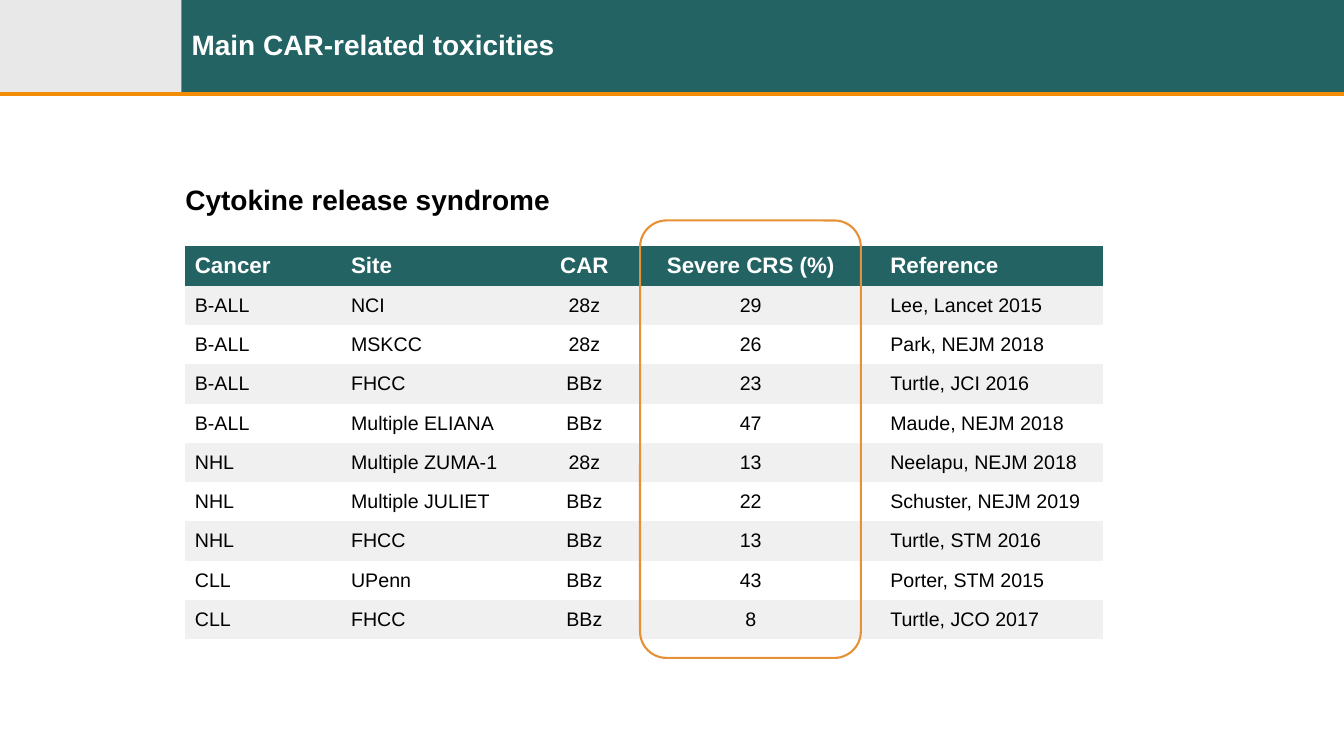
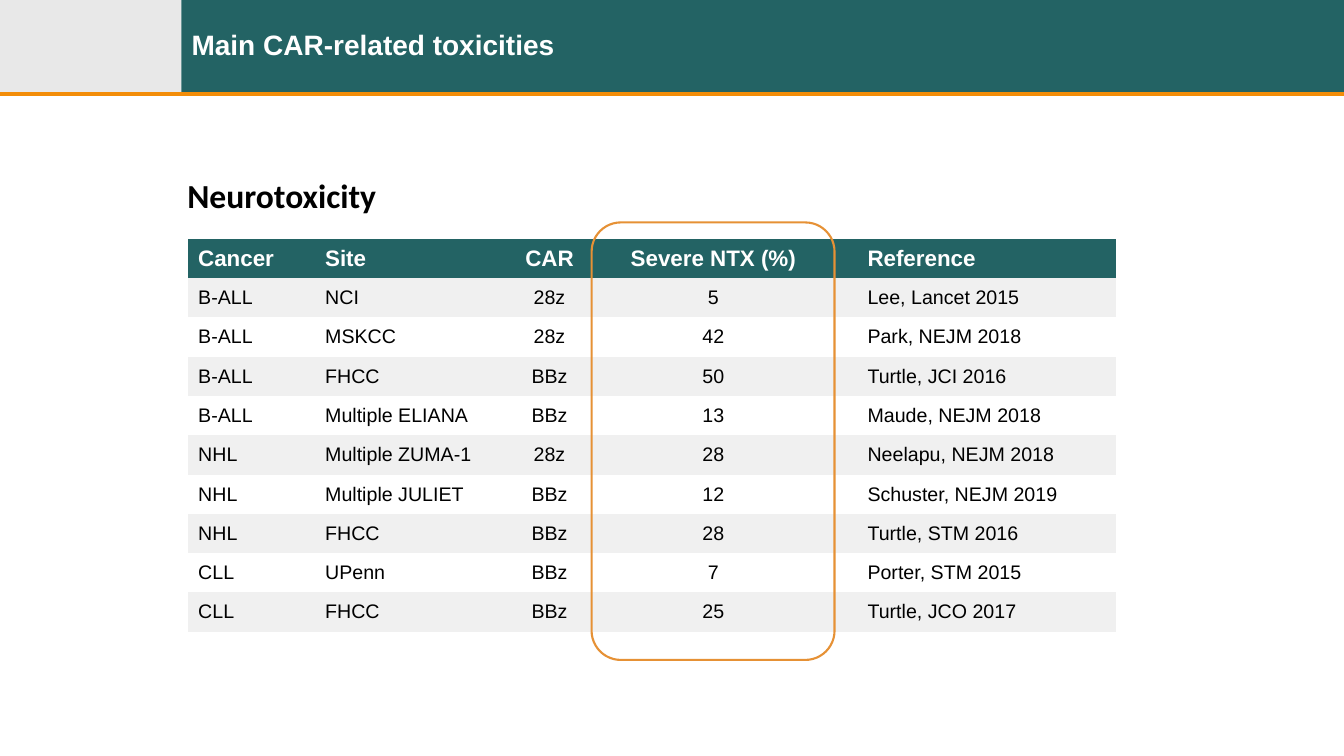
"""Build two slides of toxicity tables for CAR T-cell trials."""
from dataclasses import dataclass
from lxml.etree import SubElement
from pptx import Presentation
from pptx.dml.color import RGBColor
from pptx.enum.shapes import MSO_CONNECTOR, MSO_SHAPE
from pptx.enum.text import MSO_ANCHOR, MSO_AUTO_SIZE, PP_ALIGN
from pptx.oxml.ns import qn
from pptx.util import Pt

COLORS = {
    "teal": "236364", "orange": "F38D08", "frame": "E69135", "corner": "222222",
    "band": "F0F0F0", "white": "FFFFFF", "black": "000000",
}
WIDTH, HEIGHT = 960, 540
BAND_H, CORNER_W, ROW_H = 66.4, 129.6, 28.08
NO_STYLE = "{2D5ABB26-0587-4C30-8999-92F81FD0307C}"
CENTERED = (2, 3)
TRIALS = [
    ("B-ALL", "NCI", "28z", "Lee, Lancet 2015"),
    ("B-ALL", "MSKCC", "28z", "Park, NEJM 2018"),
    ("B-ALL", "FHCC", "BBz", "Turtle, JCI 2016"),
    ("B-ALL", "Multiple ELIANA", "BBz", "Maude, NEJM 2018"),
    ("NHL", "Multiple ZUMA-1", "28z", "Neelapu, NEJM 2018"),
    ("NHL", "Multiple JULIET", "BBz", "Schuster, NEJM 2019"),
    ("NHL", "FHCC", "BBz", "Turtle, STM 2016"),
    ("CLL", "UPenn", "BBz", "Porter, STM 2015"),
    ("CLL", "FHCC", "BBz", "Turtle, JCO 2017"),
]


@dataclass(frozen=True)
class Box:
    left: float
    top: float
    width: float
    height: float

    def emu(self) -> tuple:
        return Pt(self.left), Pt(self.top), Pt(self.width), Pt(self.height)


@dataclass(frozen=True)
class Toxicity:
    heading: str
    heading_box: Box
    heading_font: str
    heading_size: int
    measure: str
    rates: tuple
    table_left: float
    table_top: float
    col_widths: tuple
    indents: dict
    frame: Box


TOXICITIES = [
    Toxicity("Cytokine release syndrome", Box(125.3, 126.7, 277.2, 31.5), "Arial", 20,
             "Severe CRS (%)", (29, 26, 23, 47, 13, 22, 13, 43, 8),
             132, 176, (98.6, 147.6, 78.5, 159.1, 172.1), {1: 20.2, 4: 20.2},
             Box(457.2, 157.5, 157.7, 312.5)),
    Toxicity("Neurotoxicity", Box(126.7, 121.2, 150.5, 36.4), "Calibri", 24,
             "Severe NTX (%)", (5, 42, 50, 13, 28, 12, 28, 7, 25),
             134.4, 170.6, (86.4, 139.7, 64.1, 169.9, 203), {1: 11.5, 4: 25.2},
             Box(422.6, 158.9, 173.5, 312.5)),
]


def rgb(name: str) -> RGBColor:
    return RGBColor.from_string(COLORS[name])


def style(p, size: float, color: str, bold: bool, font: str = "Arial") -> None:
    for r in p.runs:
        r.font.name, r.font.size, r.font.bold = font, Pt(size), bold
        r.font.color.rgb = rgb(color)


def add_band(s, box: Box, color: str):
    sp = s.shapes.add_shape(MSO_SHAPE.RECTANGLE, *box.emu())
    sp.shadow.inherit = False
    sp.fill.solid()
    sp.fill.fore_color.rgb = rgb(color)
    sp.line.fill.background()
    return sp


def add_header(s, title: str) -> None:
    corner = add_band(s, Box(0, 0, CORNER_W, BAND_H), "corner")
    clr = corner.element.spPr.find(f"{qn('a:solidFill')}/{qn('a:srgbClr')}")
    SubElement(clr, qn("a:alpha"), val="10000")
    title_box = Box(CORNER_W, 0, WIDTH - CORNER_W, BAND_H)
    add_band(s, title_box, "teal")
    rule = s.shapes.add_connector(MSO_CONNECTOR.STRAIGHT, 0, Pt(67), Pt(WIDTH), Pt(67))
    rule.line.color.rgb = rgb("orange")
    rule.line.width = Pt(3)
    SubElement(rule.element.spPr, qn("a:effectLst"))

    sp = s.shapes.title
    sp.element.getparent().append(sp.element)
    sp.left, sp.top, sp.width, sp.height = title_box.emu()
    tf = sp.text_frame
    tf.text = title
    tf.vertical_anchor = MSO_ANCHOR.MIDDLE
    p = tf.paragraphs[0]
    p.alignment = PP_ALIGN.LEFT
    p.line_spacing = 0.9
    style(p, 20, "white", True)


def add_heading(s, tox: Toxicity) -> None:
    tf = s.shapes.add_textbox(*tox.heading_box.emu()).text_frame
    tf.word_wrap = False
    tf.auto_size = MSO_AUTO_SIZE.SHAPE_TO_FIT_TEXT
    tf.text = tox.heading
    style(tf.paragraphs[0], tox.heading_size, "black", True, tox.heading_font)


def add_rates(s, tox: Toxicity) -> None:
    rows = [("Cancer", "Site", "CAR", tox.measure, "Reference")]
    rows += [(cancer, site, car, str(rate), ref)
             for (cancer, site, car, ref), rate in zip(TRIALS, tox.rates)]
    box = Box(tox.table_left, tox.table_top, sum(tox.col_widths), ROW_H * len(rows))
    gf = s.shapes.add_table(len(rows), len(tox.col_widths), *box.emu())
    gf.element.find(f".//{qn('a:tableStyleId')}").text = NO_STYLE
    tbl = gf.table
    for col, width in zip(tbl.columns, tox.col_widths):
        col.width = Pt(width)
    for i, row in enumerate(rows):
        tbl.rows[i].height = Pt(ROW_H)
        header = i == 0
        fill = "teal" if header else "band" if i % 2 else "white"
        for j, text in enumerate(row):
            cell = tbl.cell(i, j)
            cell.fill.solid()
            cell.fill.fore_color.rgb = rgb(fill)
            cell.vertical_anchor = MSO_ANCHOR.MIDDLE
            cell.margin_left = Pt(tox.indents.get(j, 7.2))
            cell.text_frame.text = text
            p = cell.text_frame.paragraphs[0]
            p.alignment = PP_ALIGN.CENTER if j in CENTERED else PP_ALIGN.LEFT
            style(p, 16 if header else 14, "white" if header else "black", header)


def add_frame(s, box: Box) -> None:
    sp = s.shapes.add_shape(MSO_SHAPE.ROUNDED_RECTANGLE, *box.emu())
    sp.adjustments[0] = 0.12
    sp.shadow.inherit = False
    sp.fill.background()
    sp.line.color.rgb = rgb("frame")
    sp.line.width = Pt(1.5)


def main() -> None:
    prs = Presentation()
    prs.slide_width, prs.slide_height = Pt(WIDTH), Pt(HEIGHT)
    for tox in TOXICITIES:
        s = prs.slides.add_slide(prs.slide_layouts[5])
        add_header(s, "Main CAR-related toxicities")
        add_heading(s, tox)
        add_rates(s, tox)
        add_frame(s, tox.frame)
    prs.save("out.pptx")


if __name__ == "__main__":
    main()
